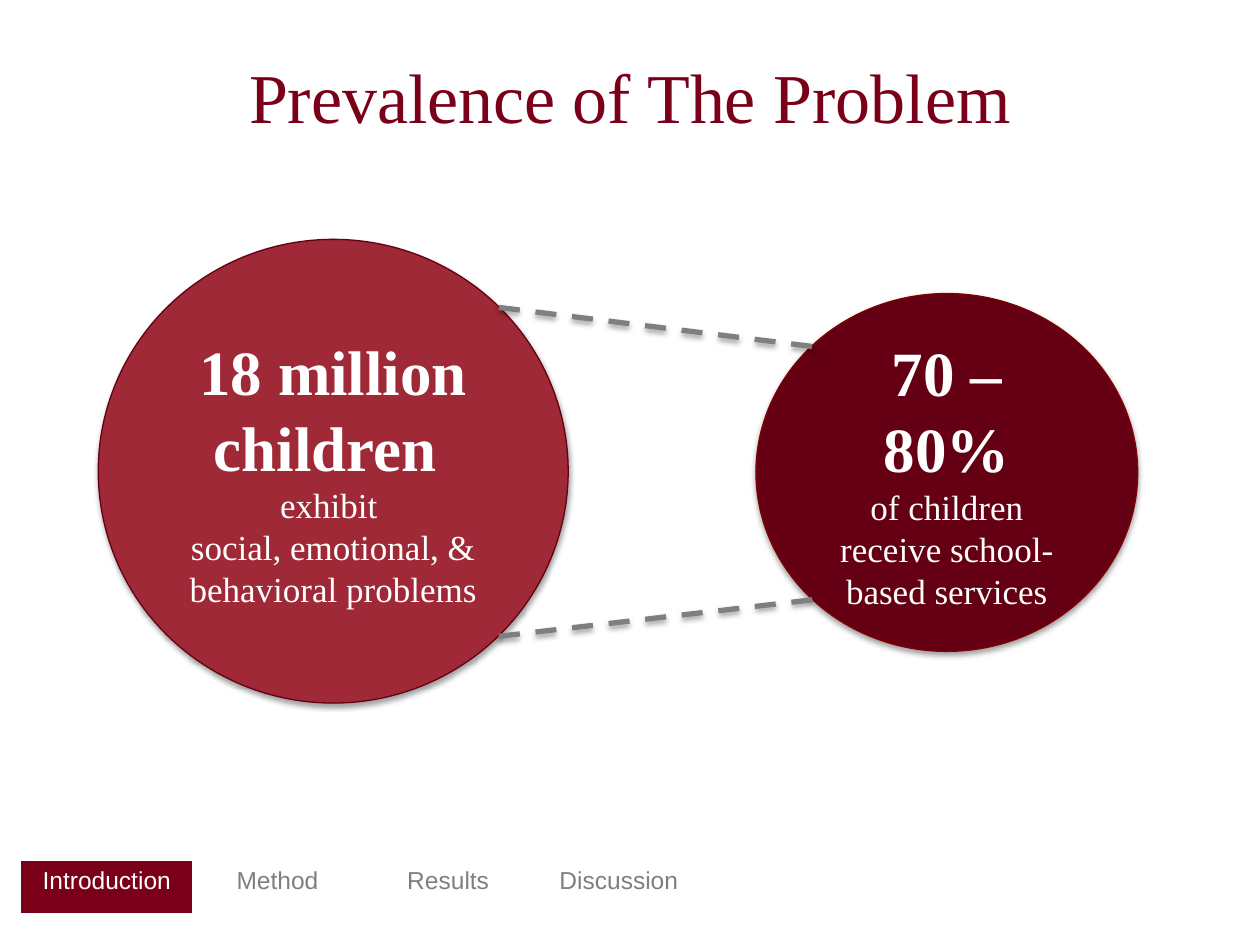
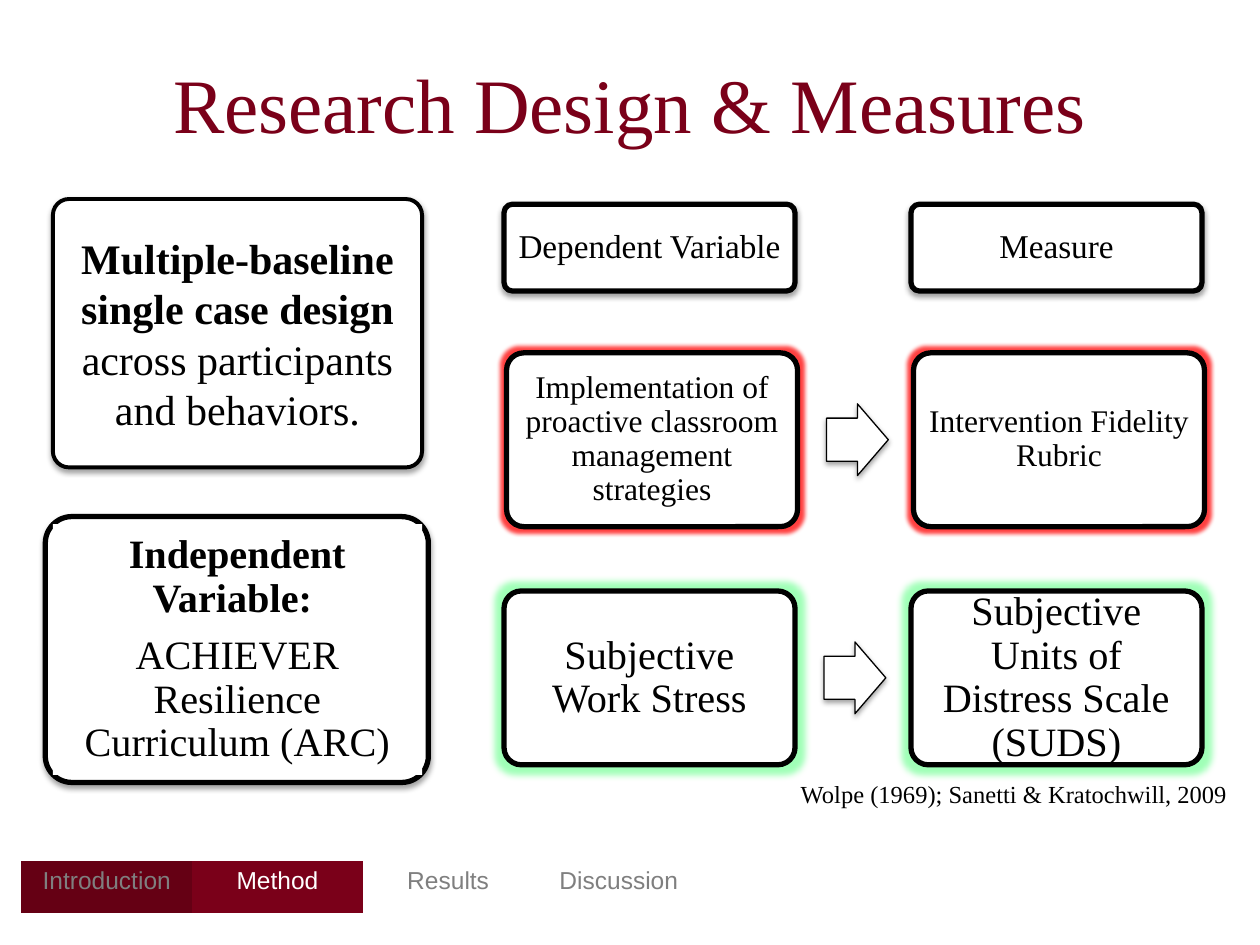
from lxml.etree import SubElement
from pptx import Presentation
from pptx.dml.color import RGBColor
from pptx.enum.dml import MSO_LINE_DASH_STYLE as DASH
from pptx.enum.shapes import MSO_CONNECTOR, MSO_SHAPE as SHAPE
from pptx.enum.text import MSO_ANCHOR as ANCHOR, PP_ALIGN as ALIGN
from pptx.oxml.ns import qn
from pptx.util import Inches, Pt

COLS, ROWS = 100, 75
MAROON, DARK, ROSE, RED_EDGE = "7A0019", "650014", "9F2936", "800000"
GREY, BLACK, WHITE = "7F7F7F", "000000", "FFFFFF"
RED_GLOW, GREEN_GLOW = "FF0000", "80FF9F"
SERIF, SANS = "Times New Roman", "Arial"
SECTIONS = ["Introduction", "Method", "Results", "Discussion"]
NO_TABLE_STYLE = "{2D5ABB26-0587-4C30-8999-92F81FD0307C}"


def rgb(hex_color):
    return RGBColor.from_string(hex_color)


class Deck:
    def __init__(self):
        self.prs = Presentation()
        self.prs.slide_width, self.prs.slide_height = Inches(10), Inches(7.5)
        self.s = None

    def x(self, cols):
        return round(self.prs.slide_width * cols / COLS)

    def y(self, rows):
        return round(self.prs.slide_height * rows / ROWS)

    def box(self, left, top, width, height):
        return self.x(left), self.y(top), self.x(width), self.y(height)

    def new_slide(self, title, section, title_top, size):
        self.s = self.prs.slides.add_slide(self.prs.slide_layouts[6])
        self.text((7.5, title_top, 85, 12.5), [[(title, size, False)]], MAROON, inset=1)
        self.nav(section)

    def fill_text(self, sp, paras, color, align=ALIGN.CENTER, inset=None, spacing=None,
                  gap=0):
        """Fill sp with paragraphs, each a list of (text, size, bold) runs."""
        tf = sp.text_frame
        tf.word_wrap = True
        tf.vertical_anchor = ANCHOR.MIDDLE
        if inset is not None:
            tf.margin_left = tf.margin_right = self.x(inset)
            tf.margin_top = tf.margin_bottom = self.y(inset)
        for i, runs in enumerate(paras):
            p = tf.add_paragraph() if i else tf.paragraphs[0]
            p.alignment = align
            if spacing:
                p.line_spacing = spacing
            if gap and i < len(paras) - 1:
                p.space_after = Pt(gap)
            for text, size, bold in runs:
                self.add_text_run(p, text, size, SERIF, color, bold)

    def add_text_run(self, p, text, size, font, color, bold=False):
        r = p.add_run()
        r.text = text
        r.font.size, r.font.name, r.font.bold = Pt(size), font, bold
        r.font.color.rgb = rgb(color)

    def text(self, at, paras, color=BLACK, **style):
        sp = self.s.shapes.add_textbox(*self.box(*at))
        self.fill_text(sp, paras, color, **style)
        return sp

    def shape(self, kind, at, fill=WHITE, line=BLACK, weight=0.75, adj=(),
              shadow=False, glow=None):
        sp = self.s.shapes.add_shape(kind, *self.box(*at))
        for i, value in enumerate(adj):
            sp.adjustments[i] = value
        sp.fill.solid()
        sp.fill.fore_color.rgb = rgb(fill)
        if line:
            sp.line.color.rgb = rgb(line)
            sp.line.width = Pt(weight)
        else:
            sp.line.fill.background()
        sp.shadow.inherit = False
        self.effect(sp, shadow, glow)
        return sp

    def effect(self, sp, shadow=False, glow=None):
        """Give sp an effect list holding a soft shadow, a (colour, points) glow or nothing."""
        spPr = sp.element.spPr
        effects = spPr.find(qn("a:effectLst"))
        if effects is None:
            effects = SubElement(spPr, qn("a:effectLst"))
        if glow:
            color, radius = glow
            self.tint(SubElement(effects, qn("a:glow"), rad=str(Pt(radius))), color, 75)
        if shadow:
            soft = SubElement(effects, qn("a:outerShdw"), blurRad=str(Pt(3.1)),
                              dist=str(Pt(1.7)), dir="5400000", rotWithShape="0")
            self.tint(soft, BLACK, 36)

    def tint(self, parent, color, percent):
        clr = SubElement(parent, qn("a:srgbClr"), val=color)
        SubElement(clr, qn("a:alpha"), val=str(percent * 1000))

    def card(self, at, paras, weight=3, adj=0.1, inset=1, spacing=0.9, **look):
        sp = self.shape(SHAPE.ROUNDED_RECTANGLE, at, weight=weight, adj=[adj], **look)
        self.fill_text(sp, paras, BLACK, inset=inset, spacing=spacing)

    def circle(self, at, paras, fill, line):
        sp = self.shape(SHAPE.OVAL, at, fill, line, shadow=True)
        self.fill_text(sp, paras, WHITE)

    def dashed_line(self, x1, y1, x2, y2):
        ln = self.s.shapes.add_connector(MSO_CONNECTOR.STRAIGHT, self.x(x1), self.y(y1),
                                         self.x(x2), self.y(y2))
        ln.line.color.rgb = rgb(GREY)
        ln.line.width = Pt(3)
        ln.line.dash_style = DASH.DASH
        self.effect(ln, shadow=True)

    def nav(self, current):
        """Section tracker: the current section is bright, earlier ones are dark."""
        frame = self.s.shapes.add_table(1, len(SECTIONS), *self.box(1.7, 68.3, 54.2, 4.2))
        table = frame.table
        table.first_row = table.horz_banding = False
        for style in frame.element.iter(qn("a:tableStyleId")):
            style.text = NO_TABLE_STYLE
        active = SECTIONS.index(current)
        for i, name in enumerate(SECTIONS):
            cell = table.cell(0, i)
            if i <= active:
                cell.fill.solid()
                cell.fill.fore_color.rgb = rgb(MAROON if i == active else DARK)
            else:
                cell.fill.background()
            p = cell.text_frame.paragraphs[0]
            p.alignment = ALIGN.CENTER
            self.add_text_run(p, name, 14, SANS, WHITE if i == active else GREY)


def prevalence(deck):
    deck.new_slide("Prevalence of The Problem", "Introduction", 1.3, 40)
    deck.circle((7.8, 19, 37.3, 36.8), [
        [("18 million children ", 36, True)],
        [("exhibit ", 20, False)],
        [("social, emotional, & behavioral problems", 20, False)]], ROSE, DARK)
    deck.circle((60, 23.3, 30.3, 28.4), [
        [("70 – 80%", 36, True)],
        [("of children receive school-based services", 20, False)]], DARK, RED_EDGE)
    for y1, y2 in [(24.4, 27.5), (50.5, 47.6)]:
        deck.dashed_line(39.6, y1, 64.5, y2)


def research_design(deck):
    deck.new_slide("Research Design & Measures", "Method", 1.9, 44)

    deck.card((4.2, 15.8, 29.3, 21.3), [[
        ("Multiple-baseline single case design ", 24, True),
        ("across participants and behaviors.", 24, False)]],
        weight=2.25, adj=0.06, spacing=None, shadow=True)

    deck.shape(SHAPE.ROUNDED_RECTANGLE, (3.6, 41, 30.4, 21.1), weight=3, adj=[0.1],
               shadow=True)
    label = deck.shape(SHAPE.RECTANGLE, (4.2, 41.6, 29.3, 19.9), line=None)
    deck.fill_text(label, [[("Independent Variable: ", 23, True)],
                           [("ACHIEVER Resilience Curriculum (ARC)", 23, False)]],
                   BLACK, inset=1, spacing=0.9, gap=8)

    card_width, pitch, arrow_offset = 23.1, 32.3, 25.4
    arrow_width, arrow_height = 4.9, 5.7
    rows = [
        (40, 16.2, 6.9, 19, 0.8, None, "Dependent Variable", "Measure"),
        (40.2, 28, 13.8, 18, 0.7, (RED_GLOW, 5),
         "Implementation of proactive classroom management strategies",
         "Intervention Fidelity Rubric"),
        (40, 46.9, 13.8, 23, 1, (GREEN_GLOW, 8), "Subjective Work Stress",
         "Subjective Units of Distress Scale (SUDS)"),
    ]
    for left, top, height, size, inset, glow, *names in rows:
        for i, name in enumerate(names):
            deck.card((left + i * pitch, top, card_width, height), [[(name, size, False)]],
                      inset=inset, shadow=not glow, glow=glow)
        if glow:
            deck.shape(SHAPE.RIGHT_ARROW,
                       (left + arrow_offset, top + (height - arrow_height) / 2,
                        arrow_width, arrow_height), adj=[0.6, 0.5], shadow=True)

    cite = deck.text((58, 61.3, 41.9, 3.4),
                     [[("Wolpe (1969); Sanetti & Kratochwill, 2009", 14, False)]],
                     align=ALIGN.RIGHT)
    cite.text_frame.margin_right = deck.x(2.5)


def main():
    deck = Deck()
    prevalence(deck)
    research_design(deck)
    deck.prs.save("out.pptx")


if __name__ == "__main__":
    main()
